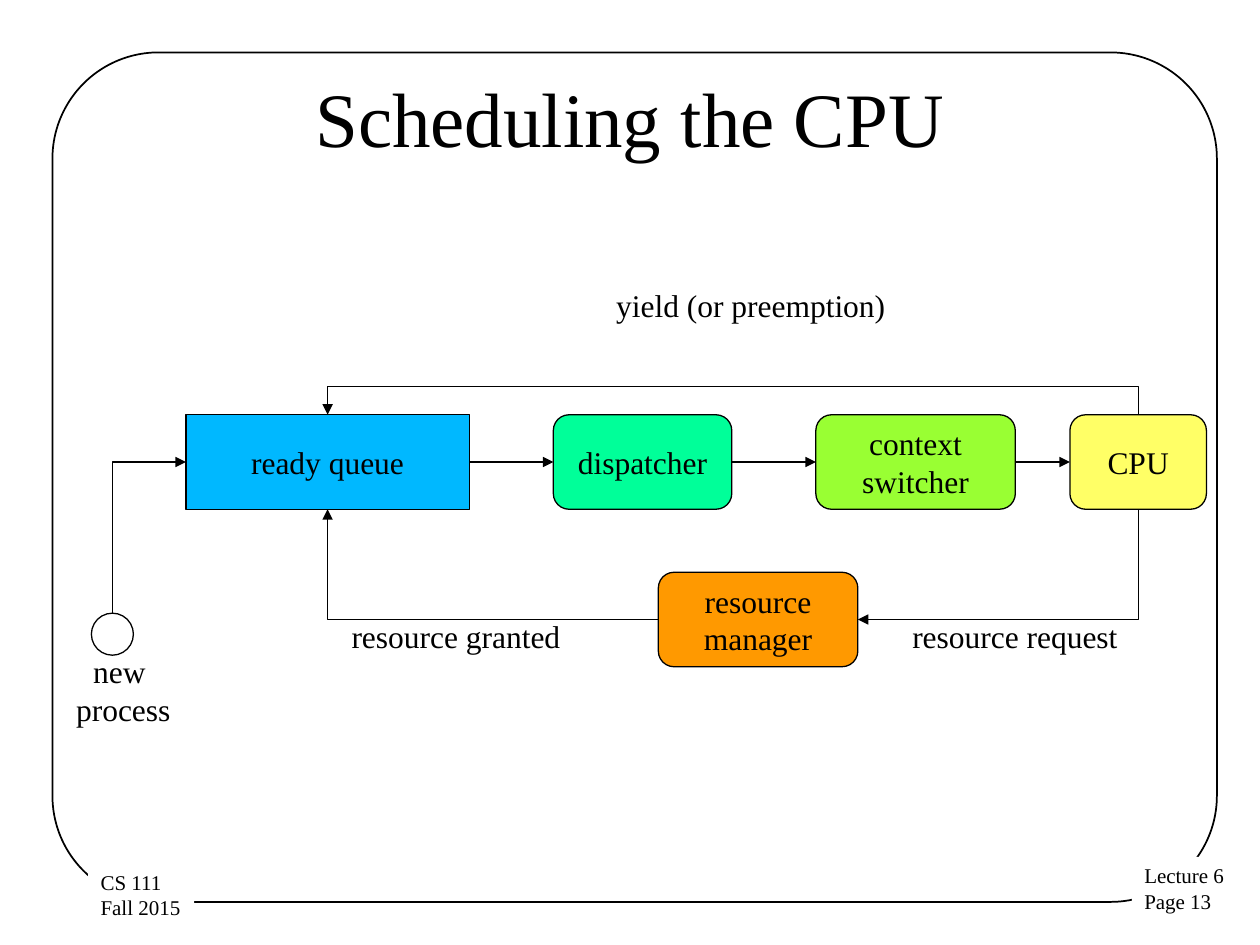
from lxml import etree
from pptx import Presentation
from pptx.dml.color import RGBColor
from pptx.enum.shapes import MSO_CONNECTOR, MSO_SHAPE
from pptx.enum.text import MSO_ANCHOR, MSO_AUTO_SIZE, PP_ALIGN
from pptx.oxml.ns import qn
from pptx.util import Emu, Inches, Pt

RECT, ROUND, OVAL = MSO_SHAPE.RECTANGLE, MSO_SHAPE.ROUNDED_RECTANGLE, MSO_SHAPE.OVAL
PROCESS = MSO_SHAPE.FLOWCHART_ALTERNATE_PROCESS
LEFT, CENTER = PP_ALIGN.LEFT, PP_ALIGN.CENTER
TOP, MIDDLE = MSO_ANCHOR.TOP, MSO_ANCHOR.MIDDLE
FIT, FIXED = MSO_AUTO_SIZE.SHAPE_TO_FIT_TEXT, MSO_AUTO_SIZE.NONE
STRAIGHT, ELBOW = MSO_CONNECTOR.STRAIGHT, MSO_CONNECTOR.ELBOW

COLS, ROWS = 120, 90
CELL = Inches(10) // COLS
FLOW_ROW, RESOURCE_ROW, BOX_ROWS = 39.5, 54.5, 9
LOOP_RISE = 3
MIN_SPAN = 1600
SITE_TOP, SITE_LEFT, SITE_BOTTOM, SITE_RIGHT = range(4)
BLACK, WHITE = "000000", "FFFFFF"


def grid(*cells):
    """Turn grid columns or rows into lengths."""
    return [Emu(round(c * CELL)) for c in cells]


def color(value):
    """Read a hex string as a colour."""
    return RGBColor.from_string(value)


def write(shape, text, size=18, align=CENTER, anchor=MIDDLE, fit=FIXED, wrap=False):
    """Fill a shape with one paragraph per line of text."""
    tf = shape.text_frame
    frame_format = {"word_wrap": wrap, "auto_size": fit, "vertical_anchor": anchor}
    for name, value in frame_format.items():
        setattr(tf, name, value)
    font_format = {"name": "Times New Roman", "size": Pt(size)}
    for i, line in enumerate(text.split("\n")):
        p = tf.paragraphs[0] if i == 0 else tf.add_paragraph()
        p.alignment = align
        r = p.add_run()
        r.text = line
        for name, value in font_format.items():
            setattr(r.font, name, value)
        r.font.color.rgb = color(BLACK)


def add_box(s, kind, cells, fill=None, weight=0.75):
    """Add a preset shape, unfilled or unlined where none is given."""
    sp = s.shapes.add_shape(kind, *grid(*cells))
    sp.shadow.inherit = False
    if fill:
        sp.fill.solid()
        sp.fill.fore_color.rgb = color(fill)
    else:
        sp.fill.background()
    if weight:
        sp.line.color.rgb = color(BLACK)
        sp.line.width = Pt(weight)
    else:
        sp.line.fill.background()
    return sp


def add_label(s, text, cells, **options):
    """Add a text box."""
    write(s.shapes.add_textbox(*grid(*cells)), text, **options)


def site(sp, index):
    """Give the point in the middle of one side of a shape."""
    x, y = sp.left + sp.width // 2, sp.top + sp.height // 2
    return [(x, sp.top), (sp.left, y), (x, sp.top + sp.height), (sp.left + sp.width, y)][index]


def add_arrow(s, kind, start, end):
    """Add a thin connector with an arrowhead at its end."""
    c = s.shapes.add_connector(kind, *start, *end)
    c.line.color.rgb = color(BLACK)
    c.line.width = Pt(0.75)
    etree.SubElement(c.line._get_or_add_ln(), qn("a:tailEnd"), type="triangle")
    etree.SubElement(c._element.spPr, qn("a:effectLst"))
    return c


def add_elbow(s, start, end, turn, preset="bentConnector2", flip=False, rise=0):
    """Add a bent arrow, laid out before its turn about the centre."""
    c = add_arrow(s, ELBOW, start, end)
    (x1, y1), (x2, y2) = start, end
    w, h = abs(x2 - x1), abs(y2 - y1)
    if turn % 180:
        w, h = h, w
    w = max(w, MIN_SPAN)
    c.left, c.top = (x1 + x2 - w) // 2, (y1 + y2 - h) // 2
    c.width, c.height = w, h
    xfrm = c._element.spPr.find(qn("a:xfrm"))
    for name in ("flipH", "flipV"):
        xfrm.attrib.pop(name, None)
    xfrm.set("rot", str(turn * 60000))
    if flip:
        xfrm.set("flipV", "1")
    geometry = c._element.spPr.find(qn("a:prstGeom"))
    geometry.set("prst", preset)
    if rise:
        share = round(rise * CELL / w * 100000)
        guides = geometry.find(qn("a:avLst"))
        etree.SubElement(guides, qn("a:gd"), name="adj1", fmla=f"val {share}")


def add_frame(s):
    """Add the rounded border and the two corner notes."""
    frame = add_box(s, ROUND, (5, 5, 110.9, 80.9), weight=1)
    frame.adjustments[0] = 0.125
    notes = [("Lecture 6\nPage 13", 107.8, 81.6), ("CS 111\nFall 2015", 8.4, 82.2)]
    for text, x, y in notes:
        note = add_box(s, RECT, (x, y, 10.1, 6.1), WHITE, weight=0)
        write(note, text, size=12, align=LEFT, anchor=TOP, fit=FIT)


def add_flow(s):
    """Add the scheduling steps and the arrows between them."""
    steps = [
        ("ready queue", RECT, 17.7, FLOW_ROW, 27, "00B8FF"),
        ("dispatcher", PROCESS, 52.7, FLOW_ROW, 17, "00FF99"),
        ("context\nswitcher", PROCESS, 77.7, FLOW_ROW, 19, "99FF33"),
        ("CPU", PROCESS, 101.9, FLOW_ROW, 13, "FFFF66"),
        ("resource\nmanager", PROCESS, 62.7, RESOURCE_ROW, 19, "FF9900"),
    ]
    boxes = []
    for text, kind, x, y, w, fill in steps:
        box = add_box(s, kind, (x, y, w, BOX_ROWS), fill)
        write(box, text)
        boxes.append(box)
    queue, dispatcher, switcher, cpu, manager = boxes
    process = add_box(s, OVAL, (8.7, 58.4, 4, 4))

    for a, b in [(queue, dispatcher), (dispatcher, switcher), (switcher, cpu)]:
        c = add_arrow(s, STRAIGHT, site(a, SITE_RIGHT), site(b, SITE_LEFT))
        c.begin_connect(a, SITE_RIGHT)
        c.end_connect(b, SITE_LEFT)

    add_elbow(s, site(cpu, SITE_TOP), site(queue, SITE_TOP), 270,
              "bentConnector3", flip=True, rise=LOOP_RISE)
    add_elbow(s, site(cpu, SITE_BOTTOM), site(manager, SITE_RIGHT), 90)
    add_elbow(s, site(manager, SITE_LEFT), site(queue, SITE_BOTTOM), 180)
    add_elbow(s, site(process, SITE_TOP), site(queue, SITE_LEFT), 270)


def main():
    """Build and save the slide."""
    prs = Presentation()
    prs.slide_width, prs.slide_height = grid(COLS, ROWS)
    s = prs.slides.add_slide(prs.slide_layouts[6])
    add_frame(s)
    add_label(s, "Scheduling the CPU", (6, 3.6, 108, 15), size=44, wrap=True)
    add_flow(s)
    labels = [
        ("yield (or preemption)", (57.5, 26.67, 28.5, 4.8), LEFT),
        ("resource request", (85.7, 58.2, 22.2, 4.8), LEFT),
        ("resource granted", (32.3, 58.2, 22.6, 4.8), LEFT),
        ("new \nprocess", (6, 61.5, 11.5, 8.5), CENTER),
    ]
    for text, cells, align in labels:
        add_label(s, text, cells, align=align, anchor=TOP, fit=FIT)
    prs.save("out.pptx")


if __name__ == "__main__":
    main()
